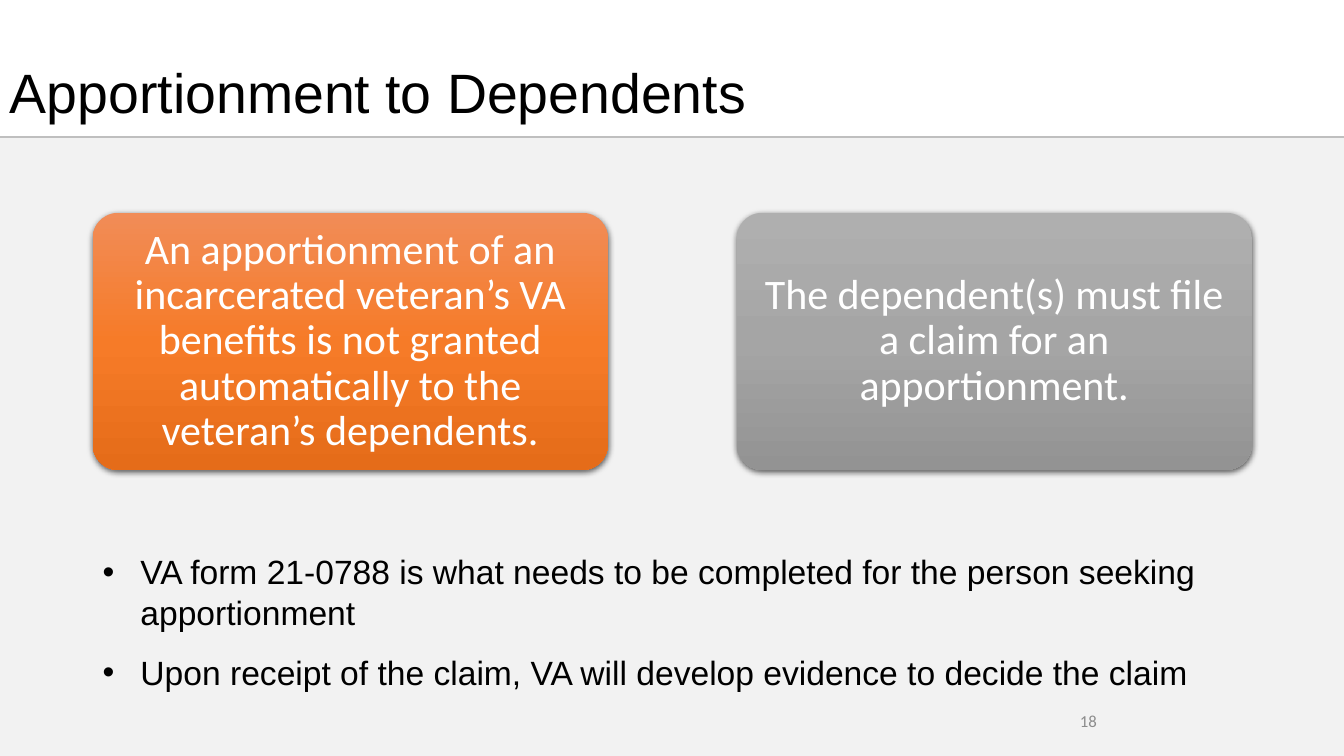
"""Build the slide on apportionment to dependents."""
from dataclasses import dataclass

from lxml import etree
from pptx import Presentation
from pptx.dml.color import RGBColor
from pptx.enum.shapes import MSO_CONNECTOR, MSO_SHAPE
from pptx.enum.text import MSO_ANCHOR, PP_ALIGN
from pptx.oxml.ns import qn
from pptx.util import Pt

RECTANGLE, ROUNDED = MSO_SHAPE.RECTANGLE, MSO_SHAPE.ROUNDED_RECTANGLE
STRAIGHT = MSO_CONNECTOR.STRAIGHT
TOP, MIDDLE = MSO_ANCHOR.TOP, MSO_ANCHOR.MIDDLE
LEFT, CENTER, RIGHT = PP_ALIGN.LEFT, PP_ALIGN.CENTER, PP_ALIGN.RIGHT


@dataclass(frozen=True)
class Theme:
    """Colours, fonts and type sizes of the slide."""
    panel: str = "F2F2F2"
    rule: str = "BFBFBF"
    ink: str = "000000"
    white: str = "FFFFFF"
    muted: str = "8C8C8C"
    orange: tuple = ("F18C57", "F67B28", "E56C19")
    grey: tuple = ("AFAFAF", "A5A5A5", "939393")
    heading_font: str = "Arial"
    card_font: str = "Calibri"
    title_size: float = 39.6
    card_size: float = 30
    body_size: float = 24
    number_size: float = 12


def add_element(parent, tag, **attributes):
    """Append a DrawingML element with the given attributes."""
    values = {name: str(value) for name, value in attributes.items()}
    return etree.SubElement(parent, qn(f"a:{tag}"), values)


def apply_format(target, values):
    """Set each named attribute on the target."""
    for name, value in values.items():
        setattr(target, name, value)


class SlideBuilder:
    """Draws themed elements on one slide."""

    def __init__(self, page, theme):
        self.shapes = page.shapes
        self.theme = theme

    def panel(self, left, top, width, height):
        """Draw the flat content background."""
        panel = self.shapes.add_shape(RECTANGLE, Pt(left), Pt(top), Pt(width), Pt(height))
        panel.shadow.inherit = False
        panel.fill.solid()
        panel.fill.fore_color.rgb = RGBColor.from_string(self.theme.panel)
        panel.line.fill.background()

    def rule(self, left, top, width):
        """Draw a horizontal rule."""
        rule = self.shapes.add_connector(STRAIGHT, Pt(left), Pt(top), Pt(left + width), Pt(top))
        rule.line.width = Pt(1.5)
        rule.line.color.rgb = RGBColor.from_string(self.theme.rule)
        add_element(rule._element.spPr, "effectLst")

    def paragraph(self, frame, text, font, size, color, align=LEFT, spacing=1.0, first=True):
        """Put one paragraph into a text frame and return it."""
        para = frame.paragraphs[0] if first else frame.add_paragraph()
        apply_format(para, {"alignment": align, "line_spacing": spacing})
        span = para.add_run()
        span.text = text
        apply_format(span.font, {"name": font, "size": Pt(size)})
        span.font.color.rgb = RGBColor.from_string(color)
        return para

    def text_box(self, left, top, width, height, anchor=MIDDLE):
        """Add a wrapping text box and return its frame."""
        box = self.shapes.add_textbox(Pt(left), Pt(top), Pt(width), Pt(height))
        apply_format(box.text_frame, {"word_wrap": True, "vertical_anchor": anchor})
        return box.text_frame

    def card(self, left, top, width, height, colors, text):
        """Draw a rounded gradient card with centred text."""
        card = self.shapes.add_shape(ROUNDED, Pt(left), Pt(top), Pt(width), Pt(height))
        card.adjustments[0] = 0.1
        card.line.fill.background()
        card.fill.gradient()
        card.fill.gradient_angle = 270
        properties = card._element.spPr
        stops = properties.find(qn("a:gradFill")).find(qn("a:gsLst"))
        for stop in list(stops):
            stops.remove(stop)
        for index, color in enumerate(colors):
            add_element(add_element(stops, "gs", pos=index * 50000), "srgbClr", val=color)
        card.shadow.inherit = False
        shadow = add_element(properties.find(qn("a:effectLst")), "outerShdw", blurRad=Pt(4.5),
                             dist=Pt(1.5), dir=5400000, algn="ctr", rotWithShape=0)
        shade = add_element(shadow, "srgbClr", val=self.theme.ink)
        add_element(shade, "alpha", val=63000)
        apply_format(card.text_frame, {
            "word_wrap": True, "vertical_anchor": MIDDLE,
            "margin_left": Pt(4.5), "margin_right": Pt(4.5),
            "margin_top": Pt(3), "margin_bottom": Pt(3)})
        self.paragraph(card.text_frame, text, self.theme.card_font, self.theme.card_size,
                       self.theme.white, CENTER, 0.9)

    def bullets(self, left, top, width, height, items):
        """Add a bulleted list."""
        frame = self.text_box(left, top, width, height, TOP)
        for index, item in enumerate(items):
            para = self.paragraph(frame, item, self.theme.heading_font, self.theme.body_size,
                                  self.theme.ink, first=index == 0)
            properties = para._p.get_or_add_pPr()
            for name, value in {"marL": Pt(27), "indent": Pt(-27)}.items():
                properties.set(name, str(value))
            add_element(properties, "buFont", typeface=self.theme.heading_font)
            add_element(properties, "buChar", char="•")
            if index:
                para.space_before = Pt(14)


def main():
    """Assemble and save the deck."""
    deck = Presentation()
    deck.slide_width, deck.slide_height = Pt(960), Pt(540)
    theme = Theme()
    page = SlideBuilder(deck.slides.add_slide(deck.slide_layouts[6]), theme)
    page.panel(0, 98.5, 960, 441.5)
    page.rule(0, 98, 960)
    page.paragraph(page.text_box(628.5, 500.5, 162, 28.75), "18", theme.card_font,
                   theme.number_size, theme.muted, RIGHT)
    page.paragraph(page.text_box(0, 39.5, 565, 57), "Apportionment to Dependents",
                   theme.heading_font, theme.title_size, theme.ink, spacing=0.9)
    cards = [
        (theme.orange, "An apportionment of an incarcerated veteran’s VA benefits is not "
                       "granted automatically to the veteran’s dependents."),
        (theme.grey, "The dependent(s) must file a claim for an apportionment."),
    ]
    for index, (colors, text) in enumerate(cards):
        page.card(66.25 + index * 460, 152, 368, 183.75, colors, text)
    page.bullets(66.25, 390.25, 849.5, 108.75, [
        "VA form 21-0788 is what needs to be completed for the person seeking apportionment",
        "Upon receipt of the claim, VA will develop evidence to decide the claim",
    ])
    deck.save("out.pptx")


if __name__ == "__main__":
    main()
